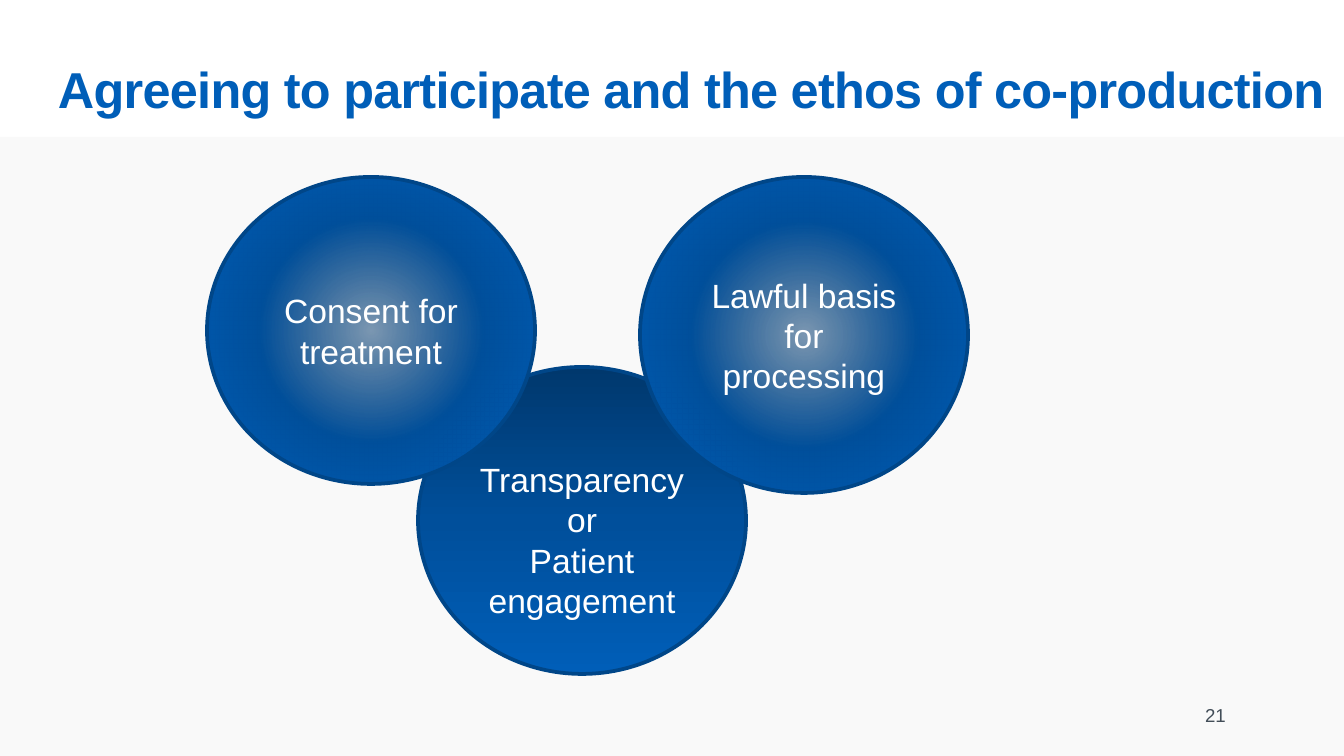
"""Build a slide of three overlapping circles on consent and co-production."""
from lxml import etree
from pptx import Presentation
from pptx.dml.color import RGBColor
from pptx.enum import shapes, text
from pptx.oxml import parse_xml
from pptx.oxml.ns import nsdecls, qn
from pptx.util import Emu, Pt

PX = 914400 / 134.4
WIDTH, HEIGHT = 1344, 756
FONT = "Arial"

WHITE = RGBColor(0xFF, 0xFF, 0xFF)
PALE = RGBColor(0xF9, 0xF9, 0xF9)
BLUE = RGBColor(0x00, 0x5E, 0xB8)
MID_BLUE = RGBColor(0x00, 0x4F, 0x9B)
NAVY = RGBColor(0x00, 0x38, 0x6D)
OUTLINE = RGBColor(0x00, 0x46, 0x88)
SLATE = RGBColor(0x42, 0x4D, 0x58)

TITLE = "Agreeing to participate and the ethos of co-production"
PAGE_NUMBER = "21"
BAND = (0, 137, WIDTH, HEIGHT - 137)
CIRCLES = [
    {"text": "Transparency or\nPatient engagement", "at": (418, 367, 328, 307), "radial": False, "top": 45},
    {"text": "Consent for treatment", "at": (207, 177, 328, 307), "radial": True, "top": 7},
    {"text": "Lawful basis for processing", "at": (640, 177, 328, 316), "radial": True, "top": 7},
]


def px(*lengths):
    return [Emu(round(length * PX)) for length in lengths]


def write(shape, words, size, color, align, bold=False):
    frame = shape.text_frame
    frame.word_wrap = True
    frame.text = words
    for para in frame.paragraphs:
        para.alignment = align
        for span in para.runs:
            font = span.font
            font.name, font.size, font.bold = FONT, Pt(size), bold
            font.color.rgb = color
    return frame


def add_shape(page, kind, at, color):
    shape = page.shapes.add_shape(kind, *px(*at))
    shape.shadow.inherit = False
    shape.fill.solid()
    shape.fill.fore_color.rgb = color
    shape.line.fill.background()
    return shape


def set_gradient(shape, radial):
    alpha = '<a:alpha val="50000"/>' if radial else ""
    middle = '<a:fillToRect l="50000" t="50000" r="50000" b="50000"/>'
    shade = f'<a:path path="circle">{middle}</a:path>' if radial else '<a:lin ang="5400000" scaled="0"/>'
    gradient = parse_xml(
        f'<a:gradFill {nsdecls("a")} rotWithShape="1"><a:gsLst>'
        f'<a:gs pos="0"><a:srgbClr val="{NAVY}">{alpha}</a:srgbClr></a:gs>'
        f'<a:gs pos="50000"><a:srgbClr val="{MID_BLUE}"/></a:gs>'
        f'<a:gs pos="100000"><a:srgbClr val="{BLUE}"/></a:gs>'
        f'</a:gsLst>{shade}</a:gradFill>')
    properties = shape._element.spPr
    properties.replace(properties.find(qn("a:solidFill")), gradient)


def add_circle(page, circle):
    shape = add_shape(page, shapes.MSO_SHAPE.OVAL, circle["at"], BLUE)
    set_gradient(shape, circle["radial"])
    shape.line.color.rgb = OUTLINE
    shape.line.width = Pt(2)
    frame = write(shape, circle["text"], 18, WHITE, text.PP_ALIGN.CENTER)
    frame.vertical_anchor = text.MSO_ANCHOR.MIDDLE
    frame.margin_top = px(circle["top"])[0]


def add_title(page):
    box = page.shapes.add_textbox(*px(58, 52, 1270, 78))
    frame = write(box, TITLE, 27, BLUE, text.PP_ALIGN.LEFT, bold=True)
    frame.margin_left, frame.margin_top, frame.margin_right, frame.margin_bottom = px(0, 6, 0, 0)
    frame.paragraphs[0].runs[0].font._element.set("spc", "-40")


def add_page_number(page):
    box = page.shapes.add_textbox(*px(926, 695, 313, 40))
    frame = write(box, PAGE_NUMBER, 10, SLATE, text.PP_ALIGN.RIGHT)
    frame.vertical_anchor = text.MSO_ANCHOR.MIDDLE


def main():
    deck = Presentation()
    deck.slide_width, deck.slide_height = px(WIDTH, HEIGHT)
    page = deck.slides.add_slide(deck.slide_layouts[6])
    add_shape(page, shapes.MSO_SHAPE.RECTANGLE, BAND, PALE)
    add_title(page)
    for circle in CIRCLES:
        add_circle(page, circle)
    add_page_number(page)
    deck.save("out.pptx")


if __name__ == "__main__":
    main()
